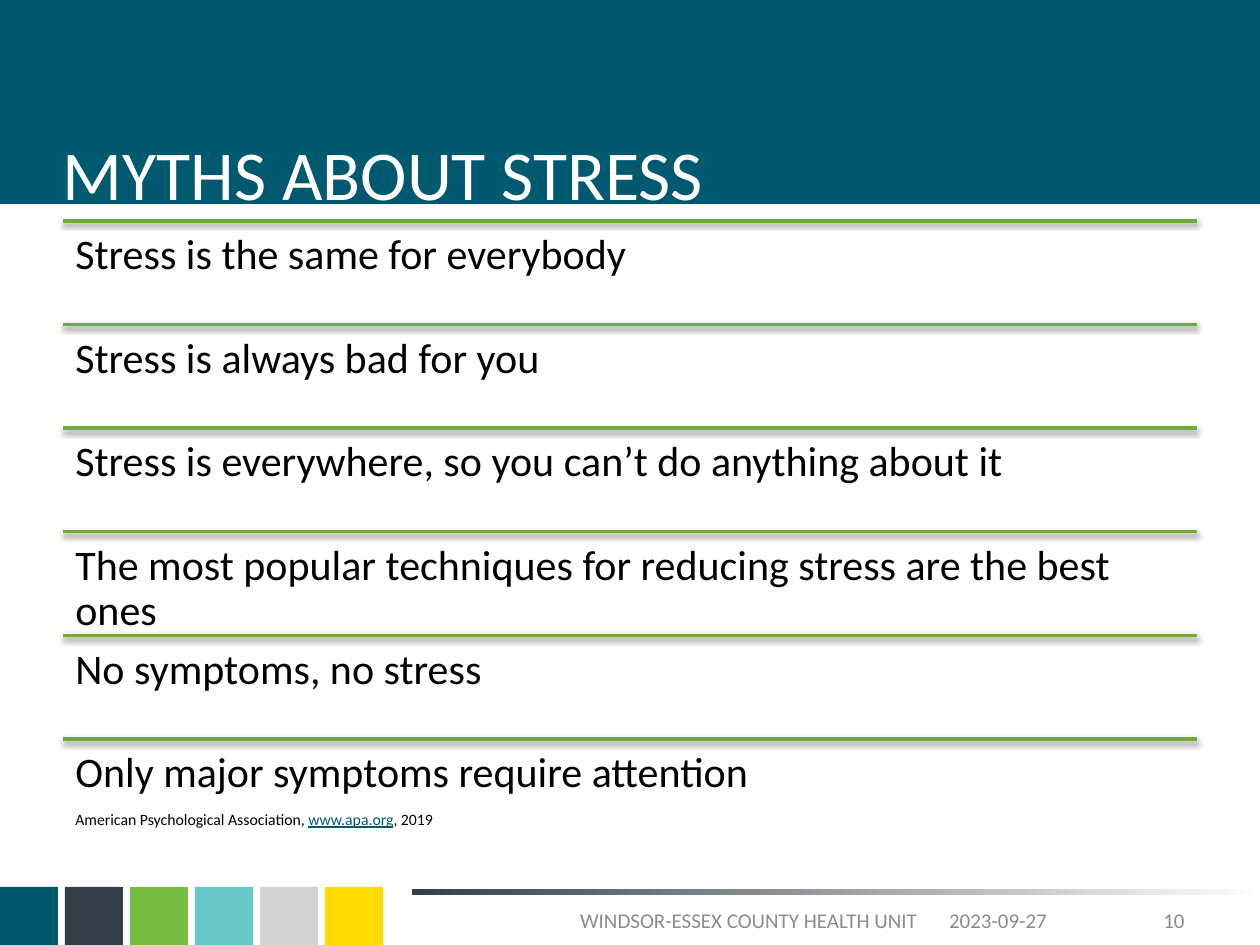
import pptx
import pptx.dml.color
import pptx.enum.shapes
import pptx.enum.text
import pptx.oxml
import pptx.oxml.ns
import pptx.util

Cm = pptx.util.Cm
Pt = pptx.util.Pt
ALIGN = pptx.enum.text.PP_ALIGN
ANCHOR = pptx.enum.text.MSO_ANCHOR

FONT = "Calibri"
TEAL = "00596F"
SLATE = "333E48"
WHITE = "FFFFFF"
BLACK = "000000"
GREY = "8C8C8C"
RULE_GREEN = "6EAB3D"
SQUARES = [TEAL, SLATE, "79BC43", "67C8C7", "D2D3D3", "FFDA00"]

LEFT, WIDTH = 1.27, 22.86
ROW_TOP, ROW_PITCH = 4.45, 2.09
MYTHS = [
    "Stress is the same for everybody",
    "Stress is always bad for you",
    "Stress is everywhere, so you can’t do anything about it",
    "The most popular techniques for reducing stress are the best ones",
    "No symptoms, no stress",
    "Only major symptoms require attention",
]
CITATION = [
    ("American Psychological Association, ", BLACK, False),
    ("www.apa.org", TEAL, True),
    (", 2019", BLACK, False),
]
FOOTER = [
    ("WINDSOR-ESSEX COUNTY HEALTH UNIT", 8.3, 13.59, ALIGN.CENTER),
    ("2023-09-27", 18.42, 3.4, ALIGN.CENTER),
    ("10", 21.89, 2.24, ALIGN.RIGHT),
]
SHADOW = (
    "<a:effectLst %s>"
    '<a:outerShdw blurRad="40000" dist="20000" dir="5400000" rotWithShape="0">'
    '<a:srgbClr val="000000"><a:alpha val="38000"/></a:srgbClr>'
    "</a:outerShdw></a:effectLst>" % pptx.oxml.ns.nsdecls("a")
)


def color(value):
    return pptx.dml.color.RGBColor.from_string(value)


def add_rect(s, left, top, width, height, fill):
    sp = s.shapes.add_shape(
        pptx.enum.shapes.MSO_SHAPE.RECTANGLE,
        Cm(left), Cm(top), Cm(width), Cm(height),
    )
    sp.shadow.inherit = False
    sp.line.fill.background()
    sp.fill.solid()
    sp.fill.fore_color.rgb = color(fill)
    return sp


def add_fading_bar(s, left, top, width, height, start, end):
    sp = add_rect(s, left, top, width, height, start)
    sp.fill.gradient()
    sp.fill.gradient_angle = 0
    for stop, value, position in zip(sp.fill.gradient_stops, (start, end), (0, 1)):
        stop.color.rgb = color(value)
        stop.position = position


def add_rule(s, left, top, width):
    line = s.shapes.add_connector(
        pptx.enum.shapes.MSO_CONNECTOR.STRAIGHT,
        Cm(left), Cm(top), Cm(left + width), Cm(top),
    )
    line.line.color.rgb = color(RULE_GREEN)
    line.line.width = Pt(2)
    line._element.spPr.append(pptx.oxml.parse_xml(SHADOW))


def add_text_frame(s, left, top, width, height, anchor, inset_x, inset_y):
    box = s.shapes.add_textbox(Cm(left), Cm(top), Cm(width), Cm(height))
    tf = box.text_frame
    tf.word_wrap = True
    tf.vertical_anchor = anchor
    tf.margin_left = tf.margin_right = Cm(inset_x)
    tf.margin_top = tf.margin_bottom = Cm(inset_y)
    return tf


def add_run(p, text, size, value, underline=False):
    r = p.add_run()
    r.text = text
    r.font.name = FONT
    r.font.size = Pt(size)
    r.font.color.rgb = color(value)
    if underline:
        r.font.underline = True


def set_body_spacing(p, size):
    p.line_spacing = 0.9
    p.space_after = Pt(0.35 * size)


def add_title(s, text):
    tf = add_text_frame(s, LEFT, 0.76, WIDTH, 3.56, ANCHOR.BOTTOM, 0, 0)
    add_run(tf.paragraphs[0], text, 40, WHITE)


def add_myth(s, top, text):
    add_rule(s, LEFT, top, WIDTH)
    tf = add_text_frame(s, LEFT, top, WIDTH, ROW_PITCH, ANCHOR.TOP, 0.25, 0.25)
    p = tf.paragraphs[0]
    set_body_spacing(p, 24)
    add_run(p, text, 24, BLACK)
    return tf


def add_citation(tf):
    p = tf.add_paragraph()
    set_body_spacing(p, 9)
    for text, value, underline in CITATION:
        add_run(p, text, 9, value, underline)


def add_footer(s):
    for i, fill in enumerate(SQUARES):
        add_rect(s, 1.31 * i, 17.88, 1.17, 1.17, fill)
    add_fading_bar(s, 8.3, 17.93, 17.1, 0.12, SLATE, WHITE)
    for text, left, width, align in FOOTER:
        tf = add_text_frame(s, left, 18.03, width, 1.02, ANCHOR.MIDDLE, 0.25, 0.13)
        p = tf.paragraphs[0]
        p.alignment = align
        p.space_after = Pt(6)
        add_run(p, text, 12, GREY)


def main():
    prs = pptx.Presentation()
    prs.slide_width = Cm(25.4)
    prs.slide_height = Cm(19.05)
    s = prs.slides.add_slide(prs.slide_layouts[6])
    add_rect(s, 0, 0, 25.4, 4.11, TEAL)
    add_footer(s)
    add_title(s, "MYTHS ABOUT STRESS")
    for i, text in enumerate(MYTHS):
        tf = add_myth(s, ROW_TOP + i * ROW_PITCH, text)
    add_citation(tf)
    prs.save("out.pptx")


if __name__ == "__main__":
    main()
